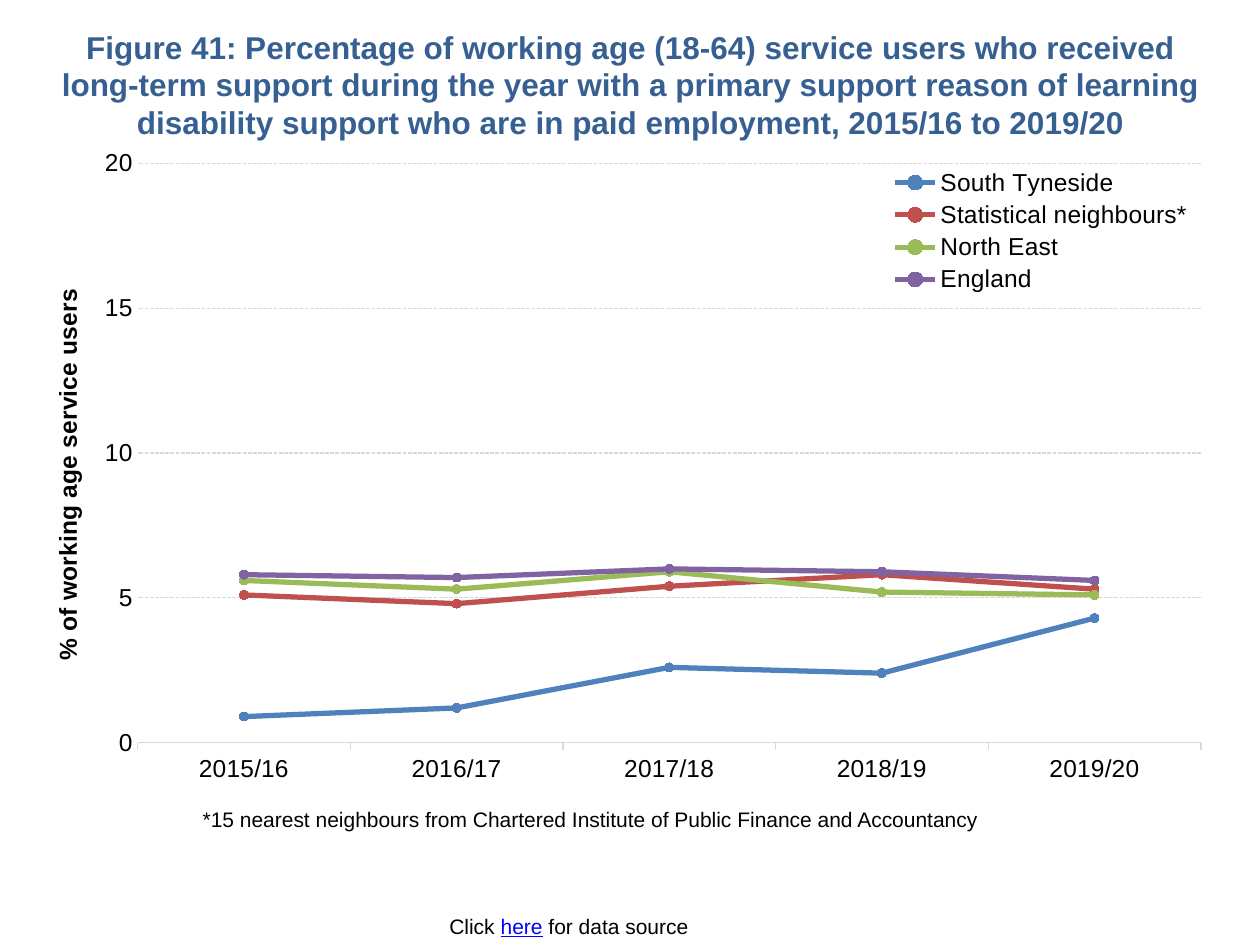
from pptx import Presentation
from pptx.chart.data import CategoryChartData
from pptx.dml.color import RGBColor
from pptx.enum.chart import XL_CHART_TYPE as CT, XL_LEGEND_POSITION as LP
from pptx.enum.chart import XL_MARKER_STYLE as MS, XL_TICK_MARK as TM
from pptx.enum.dml import MSO_LINE
from pptx.enum.text import MSO_ANCHOR as MA, PP_ALIGN as PA
from pptx.oxml import parse_xml
from pptx.oxml.ns import nsdecls, qn
from pptx.util import Inches, Pt

COLORS = {"title": "376092", "text": "000000", "link": "0000FF", "grid": "D9D9D9"}
FONT = "Arial"
TITLE = ("Figure 41: Percentage of working age (18-64) service users who received "
         "long-term support during the year with a primary support reason of learning "
         "disability support who are in paid employment, 2015/16 to 2019/20")
FOOTNOTE = "*15 nearest neighbours from Chartered Institute of Public Finance and Accountancy"
SOURCE = [("Click ", "text"), ("here", "link"), (" for data source", "text")]
AXIS_TITLE = "% of working age service users"
YEARS = ["2015/16", "2016/17", "2017/18", "2018/19", "2019/20"]
SERIES = [
    ("South Tyneside", "4F81BD", [0.9, 1.2, 2.6, 2.4, 4.3]),
    ("Statistical neighbours*", "C0504D", [5.1, 4.8, 5.4, 5.8, 5.3]),
    ("North East", "9BBB59", [5.6, 5.3, 5.9, 5.2, 5.1]),
    ("England", "8064A2", [5.8, 5.7, 6, 5.9, 5.6]),
]


def rgb(value):
    return RGBColor.from_string(value)


def style(font, size, color="text", bold=False):
    font.name, font.size, font.bold = FONT, Pt(size), bold
    font.color.rgb = rgb(COLORS[color])


def add_text(slide, box, runs, size, align=PA.LEFT, anchor=MA.TOP, bold=False):
    tf = slide.shapes.add_textbox(*map(Inches, box)).text_frame
    tf.word_wrap = True
    tf.vertical_anchor = anchor
    p = tf.paragraphs[0]
    p.alignment = align
    for text, color in runs:
        r = p.add_run()
        r.text = text
        style(r.font, size, color, bold)
        r.font.underline = color == "link"


def place(parent, after, x, y, w=None, h=None, inner=False):
    for old in parent.findall(qn("c:layout")):
        parent.remove(old)
    parts = [("layoutTarget", "inner")] if inner else []
    parts += [("xMode", "edge"), ("yMode", "edge"), ("x", x), ("y", y)]
    parts += [(k, v) for k, v in (("w", w), ("h", h)) if v is not None]
    body = "".join(f'<c:{k} val="{v}"/>' for k, v in parts)
    layout = parse_xml(f'<c:layout {nsdecls("c")}><c:manualLayout>{body}'
                       '</c:manualLayout></c:layout>')
    if after is None:
        parent.insert(0, layout)
    else:
        parent.find(qn(after)).addnext(layout)


def add_line_chart(slide, box):
    data = CategoryChartData(number_format="0.0")
    data.categories = YEARS
    for name, _, values in SERIES:
        data.add_series(name, values)
    chart = slide.shapes.add_chart(CT.LINE_MARKERS, *map(Inches, box), data).chart
    style(chart.font, 10)
    chart.has_title = False
    chart.plots[0].vary_by_categories = False

    for s, (_, color, _) in zip(chart.plots[0].series, SERIES):
        s.smooth = False
        s.format.line.width = Pt(3)
        s.marker.style, s.marker.size = MS.CIRCLE, 5
        for line in (s.format.line, s.marker.format.line):
            line.color.rgb = rgb(color)
        s.marker.format.fill.solid()
        s.marker.format.fill.fore_color.rgb = rgb(color)

    cat, val = chart.category_axis, chart.value_axis
    val.minimum_scale, val.maximum_scale, val.major_unit = 0, 20, 5
    val.has_major_gridlines = True
    grid = val.major_gridlines.format.line
    grid.dash_style = MSO_LINE.SQUARE_DOT
    for line in (cat.format.line, grid):
        line.color.rgb = rgb(COLORS["grid"])
        line.width = Pt(0.75)
    val.format.line.fill.background()
    for axis, tick in ((cat, TM.OUTSIDE), (val, TM.NONE)):
        axis.major_tick_mark, axis.minor_tick_mark = tick, TM.NONE
        style(axis.tick_labels.font, 14)
    val.tick_labels.number_format = "0"
    val.tick_labels.number_format_is_linked = False

    title = val.axis_title
    title.text_frame.text = AXIS_TITLE
    style(title.text_frame.paragraphs[0].runs[0].font, 14, bold=True)
    place(title.format.element if hasattr(title.format, "element")
          else val.axis_title._element, "c:tx", 0.01, 0.22)

    chart.has_legend = True
    legend = chart.legend
    legend.position = LP.RIGHT
    legend.include_in_layout = True
    style(legend.font, 14)
    place(legend._element, "c:legendPos", 0.71, 0.04, 0.27, 0.2)
    place(chart._chartSpace.chart.plotArea, None, 0.086, 0.039, 0.893, 0.866, True)


prs = Presentation()
prs.slide_width, prs.slide_height = Inches(10), Inches(7.5)
slide = prs.slides.add_slide(prs.slide_layouts[6])
add_text(slide, (0.28, 0.25, 9.45, 0.84), [(TITLE, "title")], 18, PA.CENTER, MA.MIDDLE, True)
add_text(slide, (3.44, 7.2, 2.15, 0.3), SOURCE, 12, PA.CENTER, MA.MIDDLE)
add_line_chart(slide, (0.28, 1.09, 9.45, 5.31))
add_text(slide, (1.51, 6.35, 6.42, 0.3), [(FOOTNOTE, "text")], 12)
prs.save("out.pptx")
